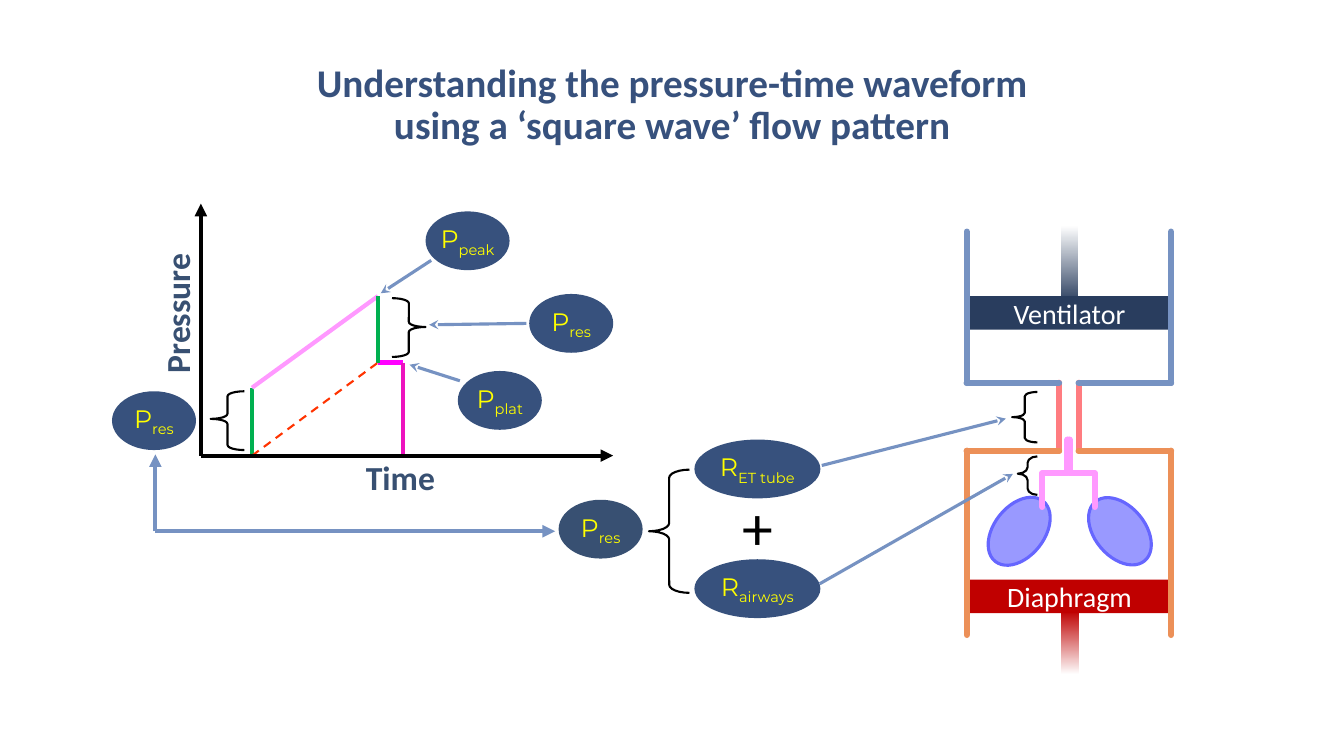
import pptx
import pptx.dml.color
import pptx.enum.dml
import pptx.enum.shapes
import pptx.enum.text
import pptx.oxml.ns
import pptx.util
from lxml import etree

Pt = pptx.util.Pt
Shape = pptx.enum.shapes.MSO_SHAPE
Link = pptx.enum.shapes.MSO_CONNECTOR
Anchor = pptx.enum.text.MSO_ANCHOR
Align = pptx.enum.text.PP_ALIGN
qn = pptx.oxml.ns.qn

COLORS = {
    "black": "000000", "white": "FFFFFF", "navy": "37517D", "slate": "385072",
    "piston": "293D5E", "red": "C00000", "yellow": "FFFF00", "steel": "7692C2",
    "green": "00B050", "pink": "FF99FF", "magenta": "FF00FF", "plum": "ED13BE",
    "flame": "FF3300", "coral": "FF7C80", "orange": "EC9058",
    "lung": "9999FF", "lung edge": "6666FF",
}


def rgb(name):
    """Return the named colour."""
    return pptx.dml.color.RGBColor.from_string(COLORS[name])


def add_line(page, box, start, end, color, width, head=None, dash=None, cap=None, turn=None):
    """Draw a line between two points of a box, elbowed if it has a turn in degrees."""
    left, top = box
    kind = Link.STRAIGHT if turn is None else Link.ELBOW
    line = page.shapes.add_connector(
        kind, Pt(left + start[0]), Pt(top + start[1]), Pt(left + end[0]), Pt(top + end[1]))
    line.line.color.rgb = rgb(color)
    line.line.width = Pt(width)
    if dash:
        line.line.dash_style = dash
    outline = line.line._get_or_add_ln()
    if cap:
        outline.set("cap", cap)
    if head:
        etree.SubElement(outline, qn("a:tailEnd"), type=head)
    properties = line._element.spPr
    etree.SubElement(properties, qn("a:effectLst"))
    if turn is not None:
        properties.find(qn("a:xfrm")).set("rot", str(turn * 60000))


def add_figure(page, box, kind, area, fill=None, edge=None, width=1.5, adjust=(), turn=0):
    """Draw a preset shape in an area of a box."""
    x, y, wide, high = area
    figure = page.shapes.add_shape(kind, Pt(box[0] + x), Pt(box[1] + y), Pt(wide), Pt(high))
    figure.shadow.inherit = False
    figure.rotation = turn
    for index, value in enumerate(adjust):
        figure.adjustments[index] = value
    if fill:
        figure.fill.solid()
        figure.fill.fore_color.rgb = rgb(fill)
    else:
        figure.fill.background()
    if edge:
        figure.line.color.rgb = rgb(edge)
        figure.line.width = Pt(width)
    else:
        figure.line.fill.background()
    return figure


def write(shape, text, font, size, color, bold=False, subscript=None):
    """Write one centred, unwrapped line with an optional subscript."""
    frame = shape.text_frame
    frame.word_wrap = False
    frame.vertical_anchor = Anchor.MIDDLE
    para = frame.paragraphs[0]
    para.text = text
    para.alignment = Align.CENTER
    if subscript:
        span = para.add_run()
        span.text = subscript
        span.font._element.set("baseline", "-25000")
    for span in para.runs:
        span.font.name = font
        span.font.size = Pt(size)
        span.font.bold = bold
        span.font.color.rgb = rgb(color)


def add_bubble(page, box, x, y, symbol, subscript, wide=60, fill="navy"):
    """Draw an oval holding a symbol with its subscript."""
    bubble = add_figure(page, box, Shape.OVAL, (x, y, wide, 42), fill)
    write(bubble, symbol, "Montserrat", 18, "yellow", subscript=subscript)


def add_label(page, box, area, text, size, color, bold=False, turn=0):
    """Place a text label without side margins in an area of a box."""
    x, y, wide, high = area
    label = page.shapes.add_textbox(Pt(box[0] + x), Pt(box[1] + y), Pt(wide), Pt(high))
    label.rotation = turn
    label.text_frame.margin_left = label.text_frame.margin_right = Pt(0)
    write(label, text, "Calibri", size, color, bold)


def add_rod(page, box, area, color, turn):
    """Draw a piston rod that fades out away from its piston."""
    rod = add_figure(page, box, Shape.RECTANGLE, area, color, turn=turn)
    rod.fill.gradient()
    rod.fill.gradient_angle = 90
    for stop, position in zip(rod.fill.gradient_stops, (0, 1)):
        stop.color.rgb = rgb(color)
        stop.position = position
    clear = rod._element.spPr.findall(".//" + qn("a:srgbClr"))[-1]
    etree.SubElement(clear, qn("a:alpha"), val="0")


def build_title(page, left, top, width, height):
    """Format the title placeholder."""
    title = page.shapes.title
    title.left, title.top, title.width, title.height = map(Pt, (left, top, width, height))
    write(title, "Understanding the pressure-time waveform using a ‘square wave’ flow pattern",
          "Calibri", 28, "navy", True)
    title.text_frame.word_wrap = True
    title.text_frame.vertical_anchor = Anchor.BOTTOM
    title.text_frame.paragraphs[0].line_spacing = 0.9


def build_ventilator(page, left, top, width):
    """Draw the ventilator above the lungs and diaphragm."""
    box = (left, top)
    middle = width / 2
    outlet, inlet = 111.5, 160
    for x, y, turn in ((19.5, 190, 38.4), (91.5, 190, 320)):
        add_figure(page, box, Shape.OVAL, (x, y, 36, 55), "lung", "lung edge", 2.25, turn=turn)
    for start, end, turn in (((106.5, 167), (58.5, 185), 90), ((39, 167), (87, 185), 270)):
        add_line(page, box, start, end, "pink", 4.5, cap="rnd", turn=turn)
    for text, y, color in (("Diaphragm", 252, "red"), ("Ventilator", 49.5, "piston")):
        piston = add_figure(page, box, Shape.RECTANGLE, (1.5, y, 144, 24), color)
        write(piston, text, "Calibri", 20, "white")
    add_rod(page, box, (67.5, 0, 12, 54), "piston", 0)
    add_rod(page, box, (67.5, 274.5, 12, 44.5), "red", 180)
    for wall, tube in ((0, middle - 7), (width, middle + 7)):
        add_line(page, box, (tube, outlet), (tube, inlet), "coral", 4.5, cap="rnd")
        for far, near, color in ((3.5, outlet, "steel"), (291.5, inlet, "orange")):
            add_line(page, box, (wall, far), (wall, near), color, 4.5, cap="rnd")
            add_line(page, box, (wall, near), (tube, near), color, 4.5, cap="rnd")
    for area, adjust in (((32.5, 118, 18, 36), (0.17, 0.5)), ((36.5, 164, 14, 27.5), (0.33, 0.45))):
        add_figure(page, box, Shape.LEFT_BRACE, area, edge="black", adjust=adjust)


def build_waveform(page, left, top):
    """Draw the pressure-time curve with its axes and callouts."""
    box = (left, top)
    start, peak, end = 100, 190, 208
    base, rise, plateau, crest = 180.5, 132, 114, 66.5
    for first, last, color in (
            ((start, base), (start, rise), "green"),
            ((start, rise), (peak, crest), "pink"),
            ((peak, plateau), (end, plateau), "magenta"),
            ((end, plateau), (end, base), "plum"),
            ((peak, plateau), (peak, crest), "green")):
        add_line(page, box, first, last, color, 3)
    add_line(page, box, (start, base), (peak, plateau), "flame", 1.5,
             dash=pptx.enum.dml.MSO_LINE.DASH)
    for first, last in (((228, 41), (192, 64.5)), ((248.5, 127), (212.5, 115.5)),
                        ((296, 86), (226.5, 87))):
        add_line(page, box, first, last, "steel", 2.25, "stealth")
    for x, y, subscript in ((224, 6, "peak"), (0, 134.5, "res"), (247, 120, "plat"), (298, 65, "res")):
        add_bubble(page, box, x, y, "P", subscript)
    for kind, x, y, middle in ((Shape.LEFT_BRACE, 70.5, 134.5, 0.47), (Shape.RIGHT_BRACE, 200, 68, 0.49)):
        add_figure(page, box, kind, (x, y, 24, 42), edge="black", adjust=(0.15, middle))
    for tip in ((358, base), (63.5, 0.5)):
        add_line(page, box, (63.5, base), tip, "black", 3, "triangle")
    add_label(page, box, (161, 182.5, 90, 26), "Time", 24, "slate", True)
    add_label(page, box, (-6, 64.5, 104.5, 29), "Pressure", 24, "slate", True, 270)


def build_resistance(page, left, top):
    """Draw the parts of the resistive pressure and their arrows."""
    box = (left, top)
    add_bubble(page, box, 416, 0, "R", "ET tube", 90)
    add_bubble(page, box, 416, 85.5, "R", "airways", 90)
    add_bubble(page, box, 319, 43, "P", "res", fill="slate")
    add_figure(page, box, Shape.LEFT_BRACE, (383.5, 21.5, 29, 88), edge="black", adjust=(0.2, 0.5))
    add_label(page, box, (442.5, 31.5, 37, 60.5), "+", 44, "black")
    for tip in ((316.5, 65.5), (31, 10.5)):
        add_line(page, box, (31, 65.5), tip, "steel", 3, "triangle")
    for first, last in (((507, 18.5), (638.5, -15)), ((505.5, 103), (643.5, 24.5))):
        add_line(page, box, first, last, "steel", 2.25, "stealth")


def main():
    """Build the deck and save it."""
    deck = pptx.Presentation()
    deck.slide_width, deck.slide_height = Pt(960), Pt(540)
    page = deck.slides.add_slide(deck.slide_layouts[5])
    build_title(page, 204.5, 42, 551, 67.5)
    build_ventilator(page, 690.5, 162, 146)
    build_waveform(page, 80, 145)
    build_resistance(page, 80, 314)
    deck.save("out.pptx")


if __name__ == "__main__":
    main()
